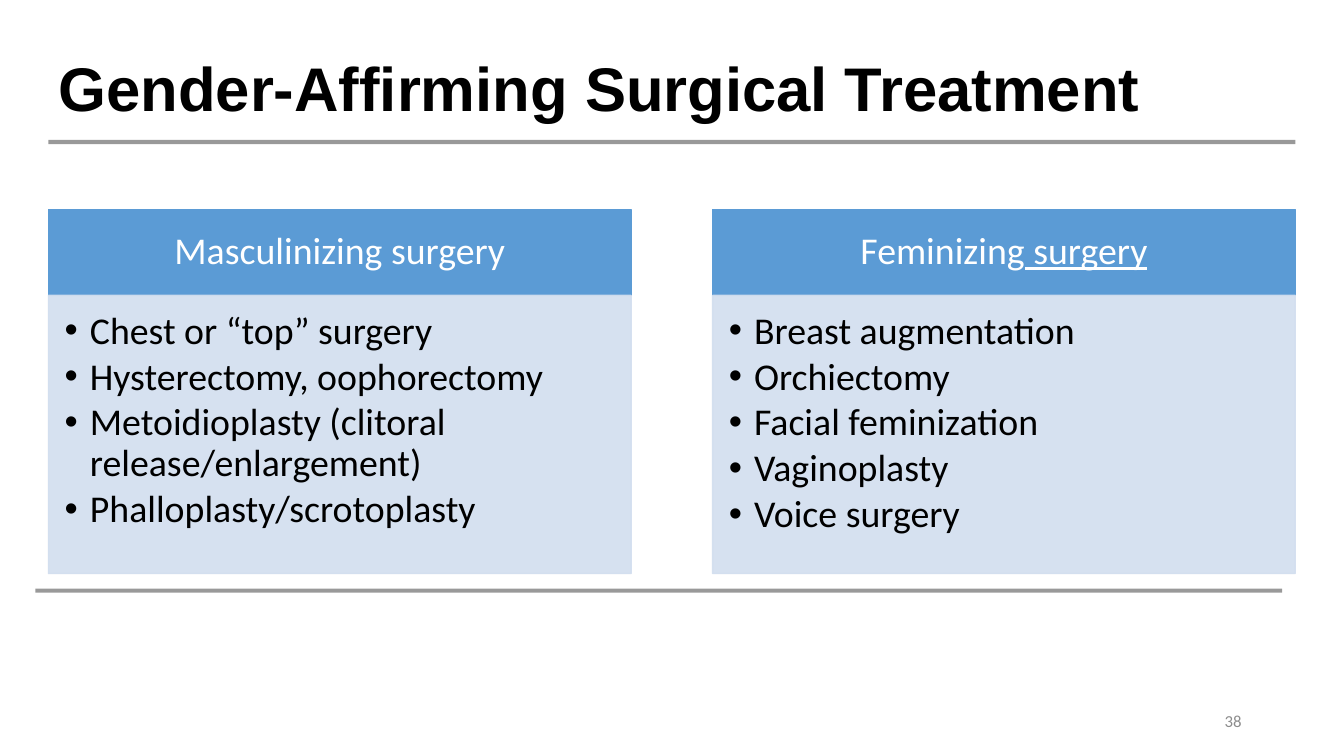
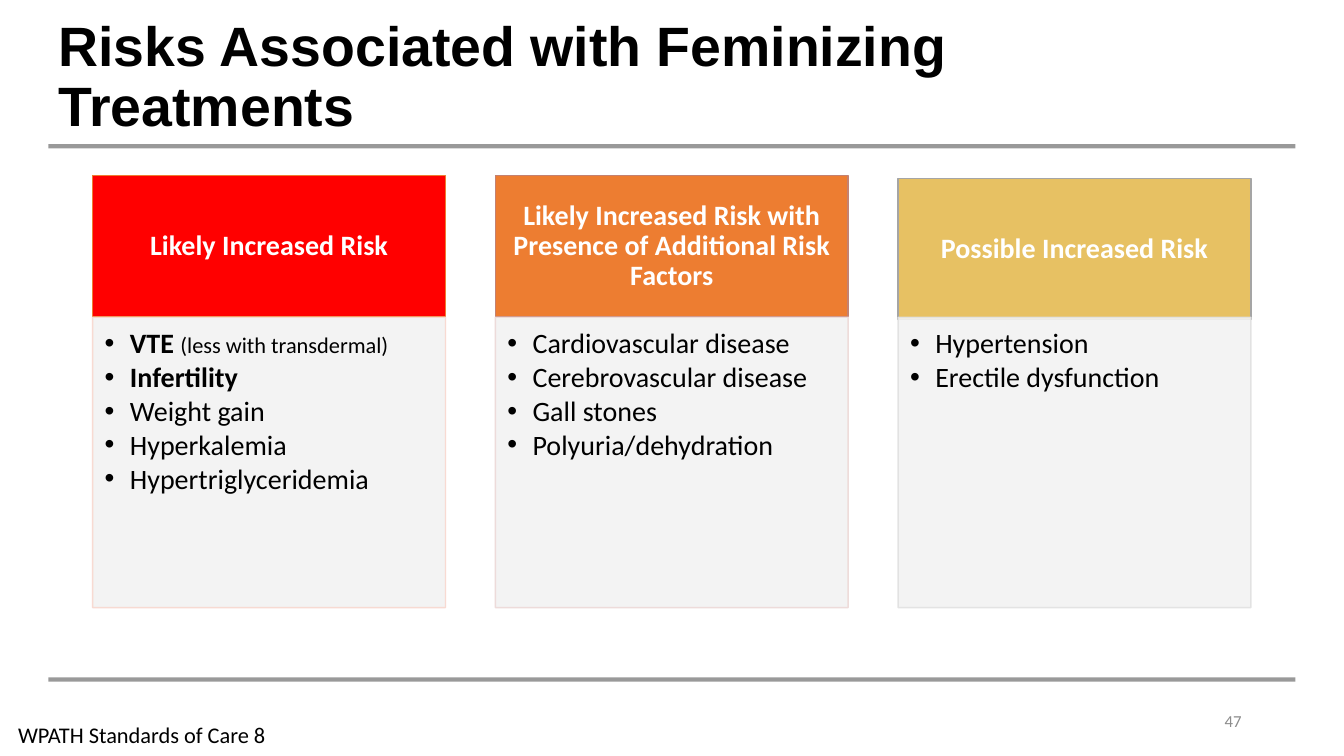
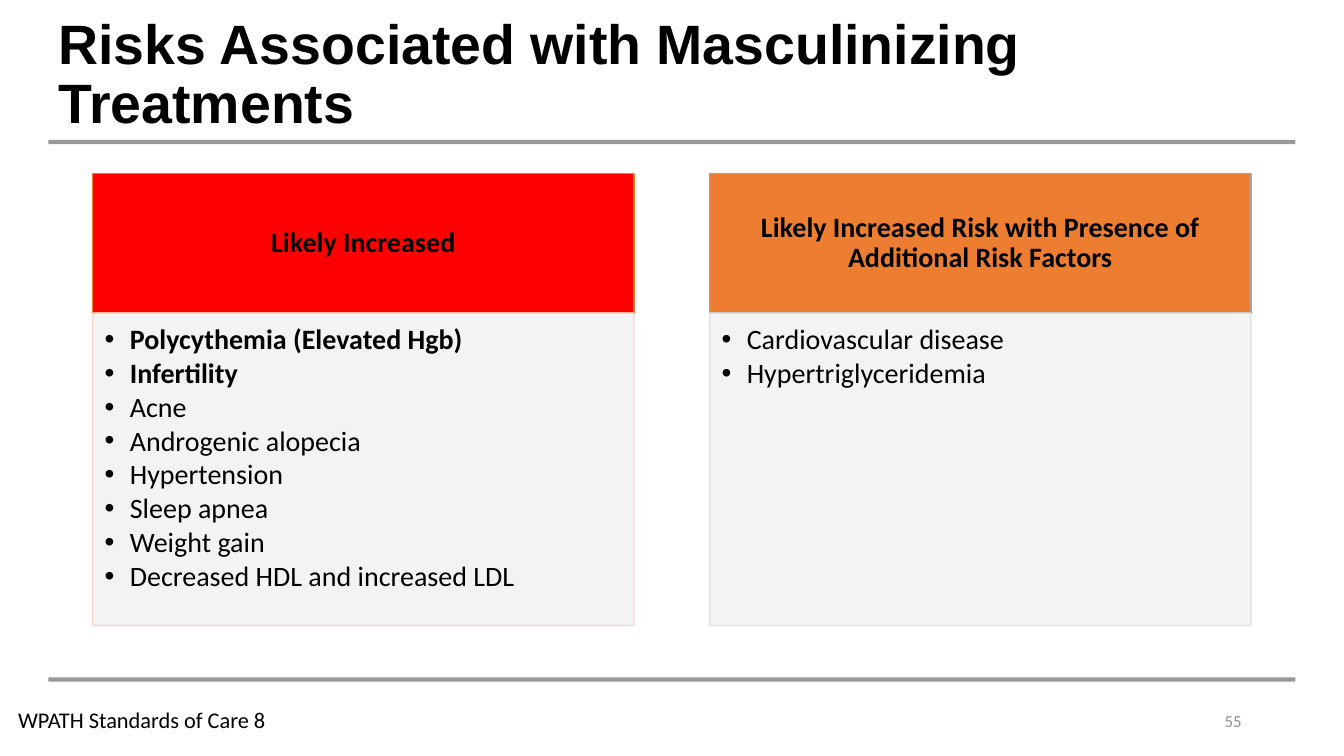
from pptx import Presentation
from pptx.dml.color import RGBColor
from pptx.enum.shapes import MSO_CONNECTOR, MSO_SHAPE
from pptx.enum.text import MSO_ANCHOR, MSO_AUTO_SIZE, PP_ALIGN
from pptx.oxml.ns import qn
from pptx.util import Pt
from lxml.etree import SubElement

BLACK, WHITE, GREY = "000000", "FFFFFF", "8C8C8C"
BLUE, PALE_BLUE = "5B9BD5", "D2DEEF"
RED, ORANGE, GOLD = "FF0000", "ED7D31", "E7C163"
SILVER, PALE_GREY = "A5A5A5", "F2F2F2"
PALE_PINK, PALE_ROSE, PALE_SILVER = "F8D7CE", "EDD9D7", "E1E1E1"

MARGIN, RIGHT_EDGE = 34.6, 925.2
CARDS_LEFT, CARDS_RIGHT = 66.2, 893.5
BOTTOM_RULE = 485.3
SOURCE = "WPATH Standards of Care 8"
BOLD = {"bold": True}


def rgb(hex_code):
    return RGBColor.from_string(hex_code)


def box(left, top, width, height):
    return Pt(left), Pt(top), Pt(width), Pt(height)


def columns(left, right, count, gap):
    """Return the left edges and the common width of equal columns."""
    width = (right - left - gap * (count - 1)) / count
    return [left + i * (width + gap) for i in range(count)], width


def set_opacity(shape, percent):
    for colour in shape._element.spPr.iter(qn("a:srgbClr")):
        SubElement(colour, qn("a:alpha"), val=str(percent * 1000))


def add_text(paragraph, text, size=20, colour=BLACK, font="Calibri", bold=False,
             underline=False, align=PP_ALIGN.LEFT, spacing=None):
    paragraph.alignment = align
    if spacing:
        paragraph.line_spacing = spacing
    run = paragraph.add_run()
    run.text = text
    run.font.name = font
    run.font.size = Pt(size)
    run.font.bold = bold
    if underline:
        run.font.underline = True
    run.font.color.rgb = rgb(colour)


def add_runs(paragraph, content, **style):
    """Write a plain string, or a list of (text, own format) pairs."""
    runs = [(content, {})] if isinstance(content, str) else content
    for text, own_style in runs:
        add_text(paragraph, text, **{**style, **own_style})


def add_title(slide, text, top, height, size=39.6):
    title = slide.shapes.title
    title.left, title.top, title.width, title.height = box(MARGIN, top, 859.7, height)
    frame = title.text_frame
    frame.auto_size = MSO_AUTO_SIZE.NONE
    frame.vertical_anchor = MSO_ANCHOR.MIDDLE
    add_text(frame.paragraphs[0], text, size=size, font="Arial", bold=True, spacing=0.9)


def add_rule(slide, top, left=MARGIN):
    right = left + RIGHT_EDGE - MARGIN
    rule = slide.shapes.add_connector(MSO_CONNECTOR.STRAIGHT,
                                      Pt(left), Pt(top), Pt(right), Pt(top))
    rule.line.color.rgb = rgb(BLACK)
    rule.line.width = Pt(3)
    set_opacity(rule, 40)
    SubElement(rule._element.spPr, qn("a:effectLst"))


def add_label(slide, text, place, anchor=MSO_ANCHOR.TOP, **style):
    frame = slide.shapes.add_textbox(*box(*place)).text_frame
    frame.word_wrap = True
    frame.vertical_anchor = anchor
    add_text(frame.paragraphs[0], text, **style)


def add_panel(slide, place, fill, outline, insets, anchor):
    panel = slide.shapes.add_shape(MSO_SHAPE.RECTANGLE, *box(*place))
    panel.shadow.inherit = False
    panel.fill.solid()
    panel.fill.fore_color.rgb = rgb(fill)
    panel.line.color.rgb = rgb(outline)
    panel.line.width = Pt(1)
    frame = panel.text_frame
    frame.word_wrap = True
    frame.vertical_anchor = anchor
    frame.margin_left, frame.margin_top, frame.margin_right, frame.margin_bottom = map(Pt, insets)
    return panel


def add_heading(slide, place, content, fill, outline, size, **style):
    insets = [size * share for share in (0.57, 0.32, 0.57, 0.32)]
    heading = add_panel(slide, place, fill, outline, insets, MSO_ANCHOR.MIDDLE)
    add_runs(heading.text_frame.paragraphs[0], content, size=size,
             align=PP_ALIGN.CENTER, spacing=0.9, **style)


def add_bullet(paragraph):
    properties = paragraph._p.get_or_add_pPr()
    properties.set("marL", str(Pt(18)))
    properties.set("indent", str(-Pt(18)))
    SubElement(properties, qn("a:buFont"), typeface="Arial")
    SubElement(properties, qn("a:buChar"), char="•")


def add_list(slide, place, items, fill, outline, size):
    insets = [size * share for share in (0.43, 0.43, 0.57, 0.64)]
    panel = add_panel(slide, place, fill, outline, insets, MSO_ANCHOR.TOP)
    set_opacity(panel, 90)
    frame = panel.text_frame
    for i, item in enumerate(items):
        paragraph = frame.add_paragraph() if i else frame.paragraphs[0]
        add_bullet(paragraph)
        paragraph.space_after = Pt(size * 0.13)
        add_runs(paragraph, item, size=size, spacing=0.9)


def add_slide(deck, number, title, rule_top):
    """Add a slide with its title, upper rule and page number."""
    slide = deck.slides.add_slide(deck.slide_layouts[5])
    add_title(slide, **title)
    add_rule(slide, rule_top)
    add_label(slide, number, (678, 500.4, 216, 28.8), MSO_ANCHOR.MIDDLE,
              size=12, colour=GREY, align=PP_ALIGN.RIGHT)
    return slide


def add_surgery_slide(deck):
    title = {"text": "Gender-Affirming Surgical Treatment", "top": 28.8, "height": 72.7, "size": 44}
    slide = add_slide(deck, "38", title, 101.5)
    add_rule(slide, 421.9, left=25.2)
    cards = [
        ("Masculinizing surgery",
         ["Chest or “top” surgery", "Hysterectomy, oophorectomy",
          "Metoidioplasty (clitoral release/enlargement)", "Phalloplasty/scrotoplasty"]),
        ([("Feminizing", {}), (" surgery", {"underline": True})],
         ["Breast augmentation", "Orchiectomy", "Facial feminization",
          "Vaginoplasty", "Voice surgery"]),
    ]
    lefts, width = columns(MARGIN, RIGHT_EDGE, len(cards), 58.2)
    for left, (heading, items) in zip(lefts, cards):
        add_heading(slide, (left, 149.8, width, 61.2), heading, BLUE, BLUE, 27, colour=WHITE)
        add_list(slide, (left, 211, width, 198.7), items, PALE_BLUE, PALE_BLUE, 27)


def add_risk_cards(slide, cards, gap, list_top, list_height, heading_height, colour):
    lefts, width = columns(CARDS_LEFT, CARDS_RIGHT, len(cards), gap)
    for left, (heading, heading_top, fill, outline, list_outline, items) in zip(lefts, cards):
        add_heading(slide, (left, heading_top, width, heading_height), heading,
                    fill, outline, 20, colour=colour, bold=True)
        add_list(slide, (left, list_top, width, list_height), items,
                 PALE_GREY, list_outline, 20)


def add_feminizing_slide(deck):
    title = {"text": "Risks Associated with Feminizing Treatments", "top": 9.4, "height": 92.9}
    slide = add_slide(deck, "47", title, 104.4)
    add_rule(slide, BOTTOM_RULE)
    add_label(slide, SOURCE, (5.8, 511.9, 473.8, 26.6), size=16)
    cards = [
        ("Likely Increased Risk", 125.5, RED, ORANGE, PALE_PINK,
         [[("VTE ", BOLD), ("(less with transdermal)", {"size": 16})],
          [("Infertility", BOLD)], "Weight gain", "Hyperkalemia", "Hypertriglyceridemia"]),
        ("Likely Increased Risk with Presence of Additional Risk Factors", 125.5,
         ORANGE, "C48170", PALE_ROSE,
         ["Cardiovascular disease", "Cerebrovascular disease", "Gall stones",
          "Polyuria/dehydration"]),
        ("Possible Increased Risk", 127.5, GOLD, SILVER, PALE_SILVER,
         ["Hypertension", "Erectile dysfunction"]),
    ]
    add_risk_cards(slide, cards, gap=35.6, list_top=226.6, list_height=207.4,
                   heading_height=100.8, colour=WHITE)


def add_masculinizing_slide(deck):
    title = {"text": "Risks Associated with Masculinizing Treatments", "top": 18, "height": 72.7}
    slide = add_slide(deck, "55", title, 101.5)
    add_rule(slide, BOTTOM_RULE)
    add_label(slide, SOURCE, (5.8, 501.1, 473.8, 26.6), size=16)
    cards = [
        ("Likely Increased", 124, RED, ORANGE, PALE_PINK,
         [[("Polycythemia (Elevated Hgb)", BOLD)], [("Infertility", BOLD)], "Acne",
          "Androgenic alopecia", "Hypertension", "Sleep apnea", "Weight gain",
          "Decreased HDL and increased LDL"]),
        ("Likely Increased Risk with Presence of Additional Risk Factors", 124,
         ORANGE, SILVER, PALE_SILVER,
         ["Cardiovascular disease", "Hypertriglyceridemia"]),
    ]
    add_risk_cards(slide, cards, gap=54, list_top=223.7, list_height=223.2,
                   heading_height=99.7, colour=BLACK)


def main():
    deck = Presentation()
    deck.slide_width, deck.slide_height = Pt(960), Pt(540)
    add_surgery_slide(deck)
    add_feminizing_slide(deck)
    add_masculinizing_slide(deck)
    deck.save("out.pptx")


if __name__ == "__main__":
    main()
